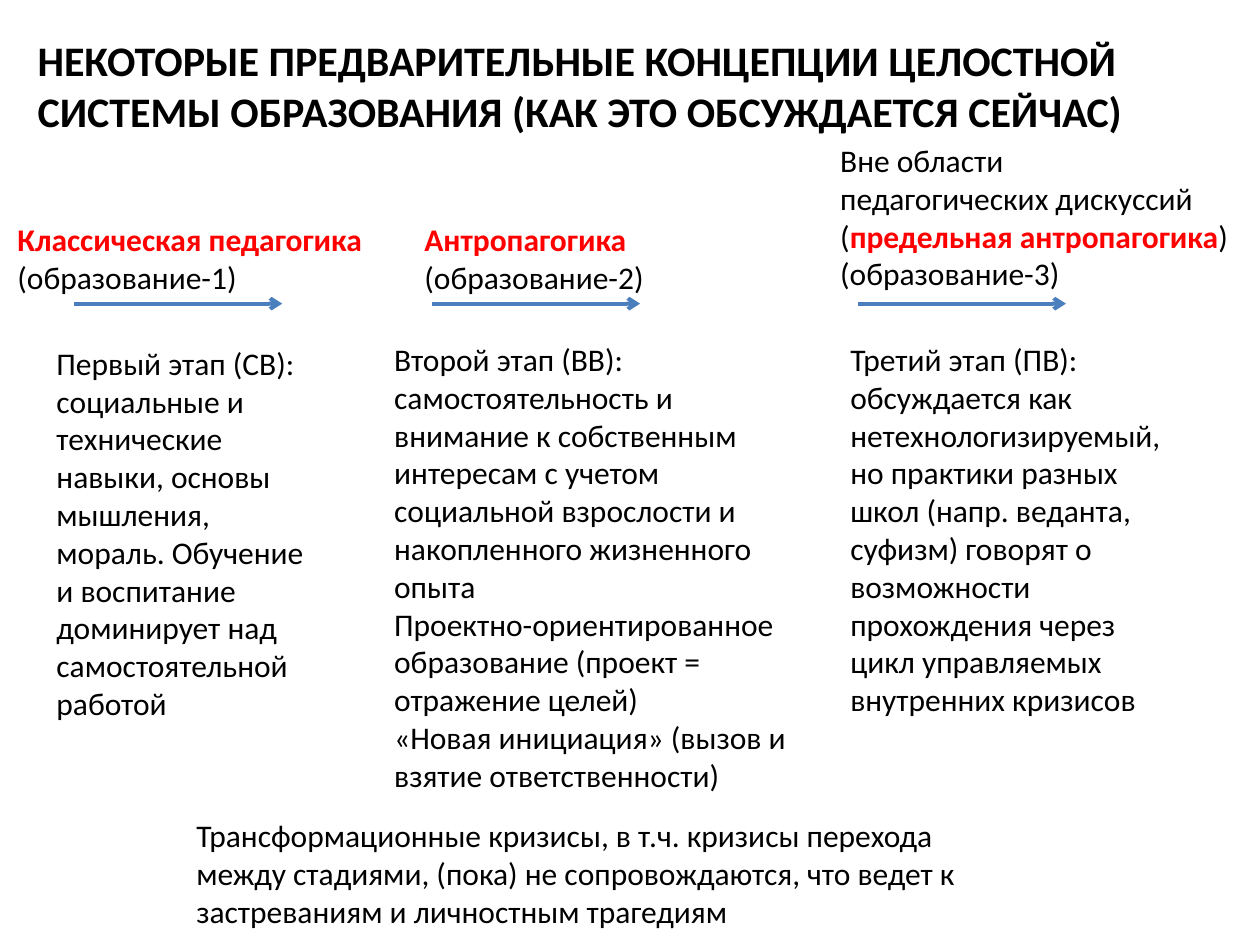
from lxml.etree import SubElement
from pptx import Presentation
from pptx.dml.color import RGBColor
from pptx.enum.shapes import MSO_CONNECTOR
from pptx.enum.text import MSO_ANCHOR
from pptx.oxml.ns import qn
from pptx.util import Inches, Pt

COLORS = {"text": "000000", "accent": "FF0000", "arrow": "4B7EBC"}
FORMATS = {
    "title": {"size": Pt(24), "bold": True},
    "body": {"size": Pt(18), "bold": False},
    "accent": {"size": Pt(18), "bold": True},
}

prs = Presentation()
prs.slide_width, prs.slide_height = Inches(10), Inches(7.5)
s = prs.slides.add_slide(prs.slide_layouts[6])

# Grid of 100 columns by 75 rows
COL, ROW = prs.slide_width / 100, prs.slide_height / 75


def add_text(box, paragraphs, style="body", wrap=True):
    """Text box on the grid; words between asterisks get the accent style."""
    x, y, w, h = box
    sp = s.shapes.add_textbox(int(x * COL), int(y * ROW), int(w * COL), int(h * ROW))
    tf = sp.text_frame
    tf.word_wrap = wrap
    for i, line in enumerate(paragraphs):
        p = tf.paragraphs[0] if i == 0 else tf.add_paragraph()
        for j, part in enumerate(line.split("*")):
            if not part:
                continue
            r = p.add_run()
            r.text = part
            r.font.name = "Calibri"
            r.font.color.rgb = RGBColor.from_string(COLORS["accent" if j % 2 else "text"])
            for name, value in FORMATS["accent" if j % 2 else style].items():
                setattr(r.font, name, value)
    return tf


# Title
tf = add_text((2, 0.5, 90, 12.5), [
    "НЕКОТОРЫЕ ПРЕДВАРИТЕЛЬНЫЕ КОНЦЕПЦИИ ЦЕЛОСТНОЙ СИСТЕМЫ ОБРАЗОВАНИЯ "
    "(КАК ЭТО ОБСУЖДАЕТСЯ СЕЙЧАС)"], "title")
tf.vertical_anchor = MSO_ANCHOR.MIDDLE

# Stages: heading box, heading, wrap, arrow start, description box, description
stages = [
    ((0.4, 17, 29.6, 7.1), ["*Классическая педагогика*", "(образование-1)"], False, 5.9,
     (3.5, 26.8, 23.3, 31.3),
     ["Первый этап (СВ): социальные и технические навыки, основы мышления, мораль. "
      "Обучение и воспитание доминирует над самостоятельной работой"]),
    ((32.7, 17, 31.5, 7.1), ["*Антропагогика*", "(образование-2)"], True, 34.3,
     (30.3, 26.5, 33.9, 37.4),
     ["Второй этап (ВВ): самостоятельность и внимание к собственным интересам с учетом "
      "социальной взрослости и накопленного жизненного опыта",
      "Проектно-ориентированное образование (проект = отражение целей)",
      "«Новая инициация» (вызов и взятие ответственности)"]),
    ((65.7, 10.7, 34.3, 13.1),
     ["Вне области", "педагогических дискуссий", "(*предельная антропагогика*)",
      "(образование-3)"], True, 68.1,
     (66.5, 26.5, 27.6, 31.3),
     ["Третий этап (ПВ): обсуждается как нетехнологизируемый, но практики разных школ "
      "(напр. веданта, суфизм) говорят о возможности прохождения через цикл управляемых "
      "внутренних кризисов"]),
]
ARROW_ROW, ARROW_COLS = 24.1, 16.5
for head_box, heading, wrap, start, body_box, body in stages:
    add_text(head_box, heading, wrap=wrap)
    add_text(body_box, body)

    # Arrow under the heading
    y = int(ARROW_ROW * ROW)
    arrow = s.shapes.add_connector(MSO_CONNECTOR.STRAIGHT, int(start * COL), y,
                                   int((start + ARROW_COLS) * COL), y)
    arrow.line.color.rgb = RGBColor.from_string(COLORS["arrow"])
    arrow.line.width = Pt(2.25)
    SubElement(arrow.line._get_or_add_ln(), qn("a:tailEnd"), type="arrow")
    SubElement(arrow._element.spPr, qn("a:effectLst"))

# Conclusion
add_text((14.6, 64.3, 67.7, 10.1), [
    "Трансформационные кризисы, в т.ч. кризисы перехода между стадиями, (пока) "
    "не сопровождаются, что ведет к застреваниям и личностным трагедиям"])

prs.save("out.pptx")
